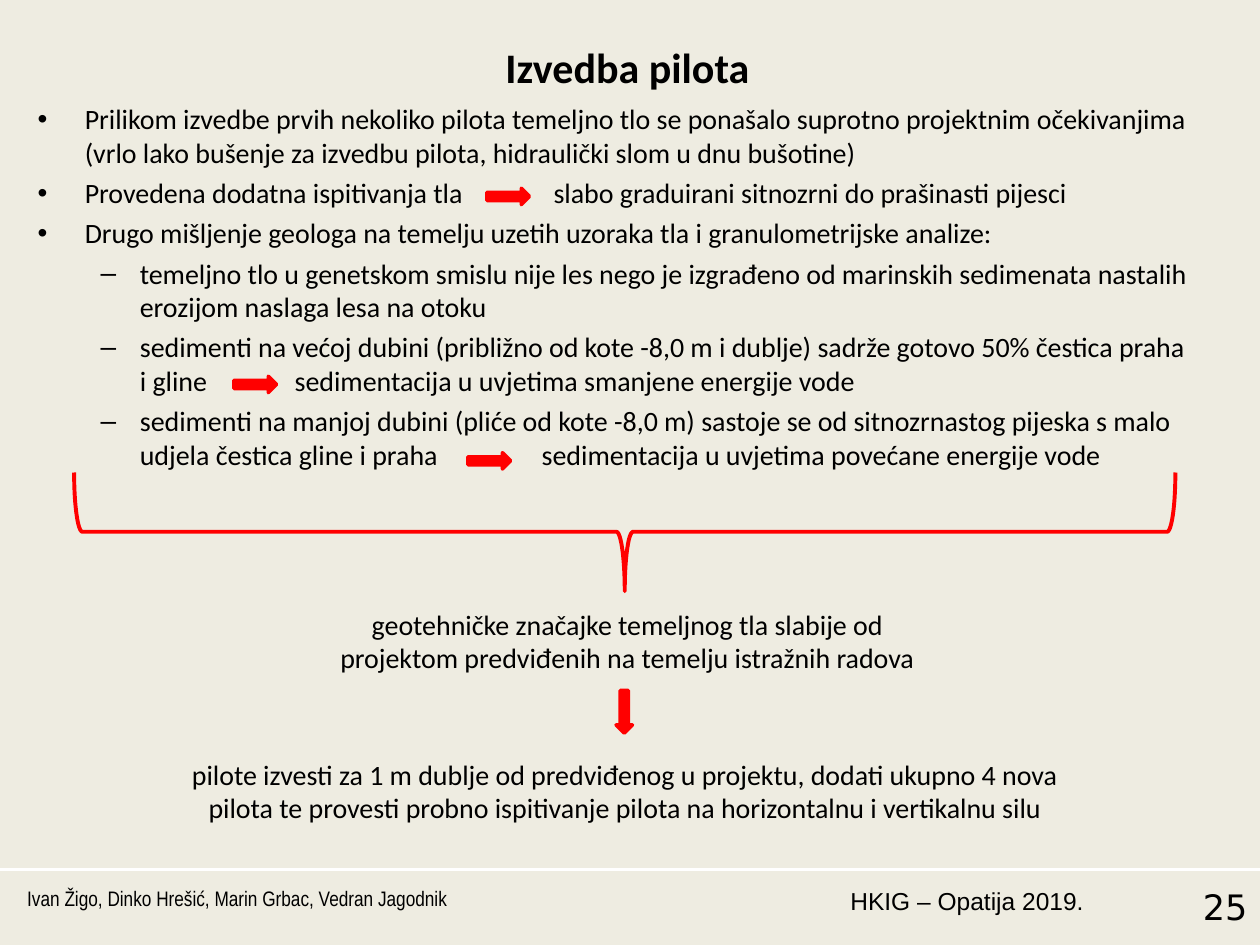
from dataclasses import dataclass
from lxml.etree import SubElement
from pptx import Presentation
from pptx.dml.color import RGBColor
from pptx.enum.shapes import MSO_CONNECTOR, MSO_SHAPE
from pptx.enum.text import MSO_ANCHOR, MSO_AUTO_SIZE, PP_ALIGN
from pptx.oxml.ns import qn
from pptx.util import Cm, Pt


@dataclass(frozen=True)
class Theme:
    back: RGBColor = RGBColor(0xEE, 0xEC, 0xE1)
    rule: RGBColor = RGBColor(0xFF, 0xFF, 0xFF)
    ink: RGBColor = RGBColor(0, 0, 0)
    mark: RGBColor = RGBColor(0xFF, 0, 0)
    font: str = "Calibri"
    title: int = 24
    body: int = 16
    gap: float = 3.8


class Page:
    def __init__(self, slide, theme):
        self.slide = slide
        self.theme = theme
        fill = slide.background.fill
        fill.solid()
        fill.fore_color.rgb = theme.back

    def style(self, para, size, font=None, bold=False):
        face = para.font
        face.name = font or self.theme.font
        face.size = Pt(size)
        face.bold = bold
        face.color.rgb = self.theme.ink

    def frame(self, box):
        frame = self.slide.shapes.add_textbox(*map(Cm, box)).text_frame
        frame.word_wrap = True
        return frame

    def text(self, words, box, size, font=None, align=PP_ALIGN.LEFT, bold=False):
        frame = self.frame(box)
        para = frame.paragraphs[0]
        para.text = words
        para.alignment = align
        self.style(para, size, font, bold)
        return frame

    def title(self, words, box):
        frame = self.text(words, box, self.theme.title,
                          align=PP_ALIGN.CENTER, bold=True)
        frame.vertical_anchor = MSO_ANCHOR.MIDDLE
        frame.margin_left = frame.margin_right = frame.margin_bottom = 0
        frame.paragraphs[0].line_spacing = 1.5

    def note(self, words, box):
        frame = self.text(words, box, self.theme.body, align=PP_ALIGN.CENTER)
        frame.auto_size = MSO_AUTO_SIZE.SHAPE_TO_FIT_TEXT

    def bullets(self, items, box):
        # Per level: sign, left margin, hanging indent
        kinds = [("•", 0.95, 0.95), ("–", 2.06, 0.79)]
        frame = self.frame(box)
        for num, (level, stop, words) in enumerate(items):
            para = frame.add_paragraph() if num else frame.paragraphs[0]
            para.text = words
            para.level = level
            sign, left, hang = kinds[level]
            props = para._p.get_or_add_pPr()
            props.set("marL", str(Cm(left)))
            props.set("indent", str(-Cm(hang)))
            SubElement(props, qn("a:buFont"), typeface="Arial")
            SubElement(props, qn("a:buChar"), char=sign)
            if stop:
                tabs = SubElement(props, qn("a:tabLst"))
                SubElement(tabs, qn("a:tab"), pos=str(Cm(stop)), algn="l")
            para.space_after = Pt(self.theme.gap)
            self.style(para, self.theme.body)

    def shape(self, kind, box, width, turn=0):
        shape = self.slide.shapes.add_shape(kind, *map(Cm, box))
        shape.shadow.inherit = False
        shape.rotation = turn
        shape.line.color.rgb = self.theme.mark
        shape.line.width = Pt(width)
        return shape

    def arrow(self, left, top, turn=0):
        box = (left, top, 0.33, 0.86)
        shape = self.shape(MSO_SHAPE.DOWN_ARROW, box, 2, turn)
        shape.fill.solid()
        shape.fill.fore_color.rgb = self.theme.mark

    def brace(self, box):
        shape = self.shape(MSO_SHAPE.LEFT_BRACE, box, 2.25, 270)
        shape.fill.background()
        shape.adjustments[0] = 0.07
        shape.adjustments[1] = 0.5

    def rule(self, top, width):
        line = self.slide.shapes.add_connector(
            MSO_CONNECTOR.STRAIGHT, 0, Cm(top), Cm(width), Cm(top))
        line.line.color.rgb = self.theme.rule
        line.line.width = Pt(1.5)
        SubElement(line._element.spPr, qn("a:effectLst"))


# Level, tab stop in cm (room for an arrow), words
ITEMS = [
    (0, None, "Prilikom izvedbe prvih nekoliko pilota temeljno tlo se ponašalo "
        "suprotno projektnim očekivanjima (vrlo lako bušenje za izvedbu pilota, "
        "hidraulički slom u dnu bušotine)"),
    (0, 10.4, "Provedena dodatna ispitivanja tla\tslabo graduirani sitnozrni do "
        "prašinasti pijesci"),
    (0, None, "Drugo mišljenje geologa na temelju uzetih uzoraka tla i "
        "granulometrijske analize:"),
    (1, None, "temeljno tlo u genetskom smislu nije les nego je izgrađeno od "
        "marinskih sedimenata nastalih erozijom naslaga lesa na otoku"),
    (1, 5.18, "sedimenti na većoj dubini (približno od kote -8,0 m i dublje) sadrže "
        "gotovo 50% čestica praha i gline\tsedimentacija u uvjetima smanjene "
        "energije vode"),
    (1, 10.16, "sedimenti na manjoj dubini (pliće od kote -8,0 m) sastoje se od "
        "sitnozrnastog pijeska s malo udjela čestica gline i praha\tsedimentacija "
        "u uvjetima povećane energije vode"),
]


def main():
    deck = Presentation()
    deck.slide_width, deck.slide_height = Cm(25.4), Cm(19.05)
    page = Page(deck.slides.add_slide(deck.slide_layouts[6]), Theme())

    # Footer
    page.rule(17.53, 25.4)
    foot, high = 17.73, 1.32
    page.text("HKIG – Opatija 2019.", (16.69, foot, 5.41, high), 14, "Arial",
              PP_ALIGN.RIGHT)
    page.text("Ivan Žigo, Dinko Hrešić, Marin Grbac, Vedran Jagodnik",
              (0.3, foot, 8.99, high), 12, "Arial Narrow")
    page.text("25", (22.3, foot, 3.1, high), 20, "DejaVu Sans", PP_ALIGN.RIGHT)

    # Title and findings
    page.title("Izvedba pilota", (0, -0.03, 25.3, 2.13))
    page.bullets(ITEMS, (0.51, 1.93, 23.85, 15.65))
    for left, top in [(10.08, 3.53), (4.98, 7.32), (9.7, 8.86)]:
        page.arrow(left, top, 270)

    # Conclusions
    page.note("geotehničke značajke temeljnog tla slabije od projektom predviđenih "
              "na temelju istražnih radova", (6.45, 12.12, 12.4, 1.63))
    page.brace((11.4, -0.38, 2.39, 22.2))
    page.arrow(12.42, 13.92)
    page.note("pilote izvesti za 1 m dublje od predviđenog u projektu, dodati ukupno "
              "4 nova pilota te provesti probno ispitivanje pilota na horizontalnu i "
              "vertikalnu silu", (3.48, 15.14, 18.24, 1.63))

    deck.save("out.pptx")


if __name__ == "__main__":
    main()
